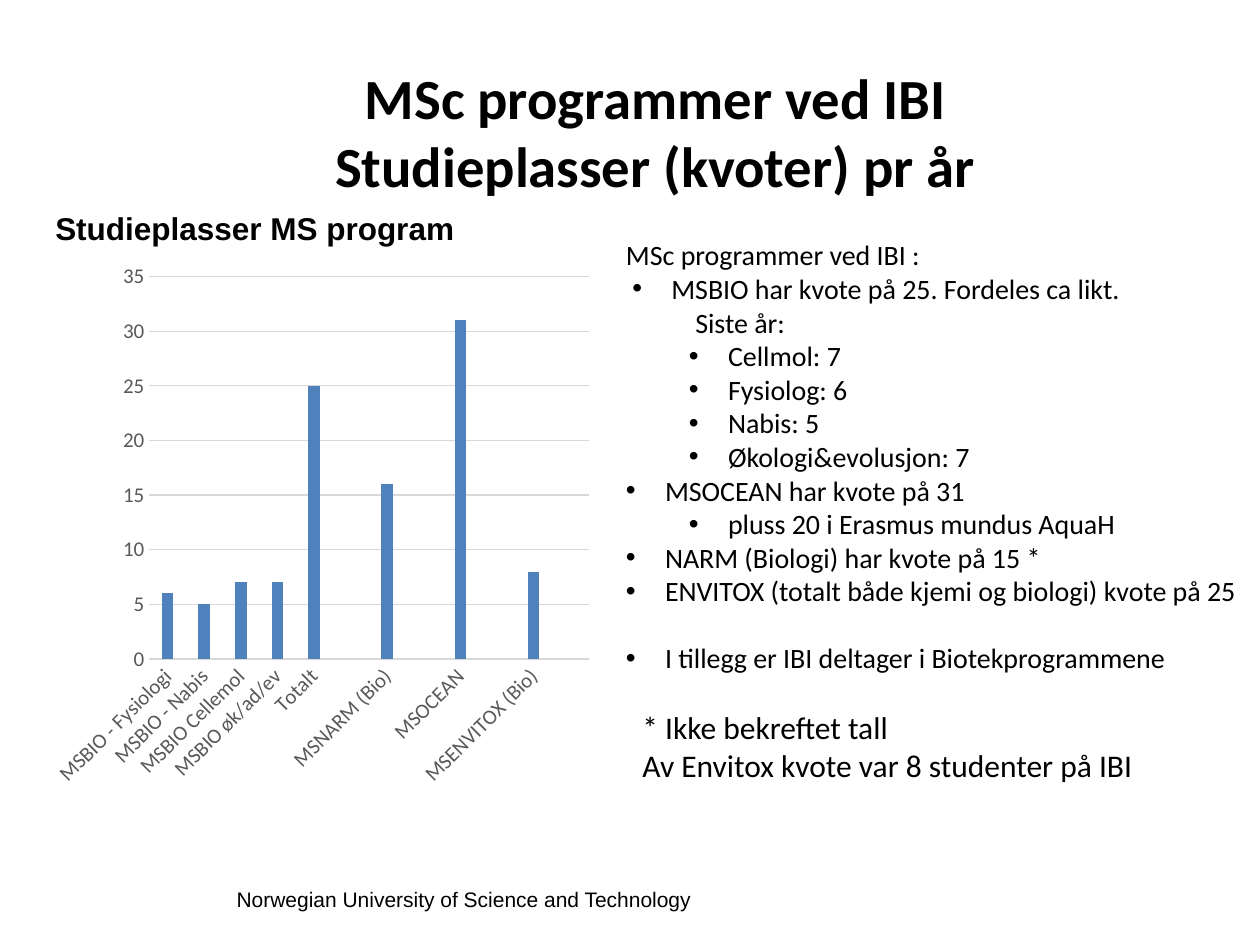
import pptx
import pptx.chart.data
import pptx.dml.color
import pptx.enum.chart
import pptx.enum.text
import pptx.oxml
import pptx.oxml.ns
import pptx.util

RGBColor = pptx.dml.color.RGBColor
Inches, Pt = pptx.util.Inches, pptx.util.Pt
ALIGN, ANCHOR = pptx.enum.text.PP_ALIGN, pptx.enum.text.MSO_ANCHOR

BLACK = RGBColor(0, 0, 0)
GREY = RGBColor(0x59, 0x59, 0x59)
GRID = RGBColor(0xD9, 0xD9, 0xD9)
BLUE = RGBColor(0x4F, 0x81, 0xBD)

TITLE = ["MSc programmer ved IBI\vStudieplasser (kvoter) pr år"]
CHART_TITLE = ["Studieplasser MS program"]
NOTES = ["* Ikke bekreftet tall", "Av Envitox kvote var 8 studenter på IBI"]
FOOTER = ["Norwegian University of Science and Technology"]

PLACES = [
    ("MSBIO - Fysiologi", 6),
    ("MSBIO - Nabis", 5),
    ("MSBIO Cellemol", 7),
    ("MSBIO øk/ad/ev", 7),
    ("Totalt", 25),
    ("", None),
    ("MSNARM (Bio)", 16),
    ("", None),
    ("MSOCEAN", 31),
    ("", None),
    ("MSENVITOX (Bio)", 8),
    ("", None),
]

HANGING = 0.31
STYLES = {
    "plain": (0, False),
    "follow": (0.55, False),
    "first": (0.36, True),
    "bullet": (0.31, True),
    "sub": (0.81, True),
}
PROGRAMMES = [
    ("plain", "MSc programmer ved IBI :"),
    ("first", "MSBIO har kvote på 25. Fordeles ca likt."),
    ("follow", "Siste år:"),
    ("sub", "Cellmol: 7"),
    ("sub", "Fysiolog: 6"),
    ("sub", "Nabis: 5"),
    ("sub", "Økologi&evolusjon: 7"),
    ("bullet", "MSOCEAN har kvote på 31"),
    ("sub", "pluss 20 i Erasmus mundus AquaH"),
    ("bullet", "NARM (Biologi) har kvote på 15 *"),
    ("bullet", "ENVITOX (totalt både kjemi og biologi) kvote på 25"),
    ("bullet", "I tillegg er IBI deltager i Biotekprogrammene"),
]

LEFT, CHART_W = 0.34, 4.42
CHART_TOP, CHART_H, HEADING_H = 2.01, 4.32, 0.7


def add_text(slide, box, lines, size, name="Calibri", bold=False,
             align=ALIGN.LEFT, anchor=ANCHOR.TOP, wrap=True):
    tf = slide.shapes.add_textbox(*map(Inches, box)).text_frame
    tf.word_wrap = wrap
    tf.vertical_anchor = anchor
    for i, line in enumerate(lines):
        p = tf.paragraphs[0] if i == 0 else tf.add_paragraph()
        p.text = line
        p.alignment = align
        p.font.size, p.font.name, p.font.bold = Pt(size), name, bold
        p.font.color.rgb = BLACK
    return tf


def set_indent(p, margin, bullet):
    pPr = p._p.get_or_add_pPr()
    pPr.set("marL", str(Inches(margin)))
    if bullet:
        first = min(margin, HANGING) if margin < 0.5 else HANGING
        pPr.set("indent", str(-Inches(first)))
        ns = pptx.oxml.ns.nsdecls("a")
        font = pptx.oxml.parse_xml(f'<a:buFont {ns} typeface="Arial"/>')
        char = pptx.oxml.parse_xml(f'<a:buChar {ns} char="•"/>')
        defaults = pPr.find(pptx.oxml.ns.qn("a:defRPr"))
        defaults.addprevious(font)
        defaults.addprevious(char)


def add_programmes(slide):
    lines = [text for _, text in PROGRAMMES]
    tf = add_text(slide, (4.87, 1.84, 5.13, 3.87), lines, 16)
    for p, (style, _) in zip(tf.paragraphs, PROGRAMMES):
        set_indent(p, *STYLES[style])
    tf.paragraphs[-1].space_before = Pt(19.2)


def style_axis(axis):
    axis.major_tick_mark = pptx.enum.chart.XL_TICK_MARK.NONE
    axis.minor_tick_mark = pptx.enum.chart.XL_TICK_MARK.NONE
    font = axis.tick_labels.font
    font.size, font.name = Pt(12), "Calibri"
    font.color.rgb = GREY


def add_places_chart(slide):
    data = pptx.chart.data.CategoryChartData()
    data.categories = [name for name, _ in PLACES]
    data.add_series("Series 1", [value for _, value in PLACES])
    chart = slide.shapes.add_chart(
        pptx.enum.chart.XL_CHART_TYPE.COLUMN_CLUSTERED,
        *map(Inches, (LEFT, CHART_TOP, CHART_W, CHART_H)), data).chart
    chart.has_legend = False
    chart.has_title = False
    chart.font.size, chart.font.name = Pt(10), "Calibri"
    chart.font.color.rgb = BLACK

    plot = chart.plots[0]
    plot.vary_by_categories = False
    plot.gap_width, plot.overlap = 219, -27
    fill = plot.series[0].format.fill
    fill.solid()
    fill.fore_color.rgb = BLUE

    cat, val = chart.category_axis, chart.value_axis
    style_axis(cat)
    style_axis(val)
    cat.has_major_gridlines = False
    val.has_major_gridlines = True
    val.minimum_scale, val.maximum_scale, val.major_unit = 0, 35, 5
    val.format.line.fill.background()
    for line in (cat.format.line, val.major_gridlines.format.line):
        line.color.rgb = GRID
        line.width = Pt(0.75)
    body = cat.tick_labels.font._element.getparent().getparent().getparent()
    body.find(pptx.oxml.ns.qn("a:bodyPr")).set("rot", str(-45 * 60000))


def main():
    prs = pptx.Presentation()
    prs.slide_width, prs.slide_height = Inches(10), Inches(7.5)
    slide = prs.slides.add_slide(prs.slide_layouts[6])
    add_text(slide, (1.78, 6.99, 4.17, 0.3), FOOTER, 12, "Arial")
    add_text(slide, (0.7, 0.41, 9, 1.25), TITLE, 32.4, bold=True,
             align=ALIGN.CENTER, anchor=ANCHOR.MIDDLE)
    add_programmes(slide)
    add_text(slide, (LEFT, CHART_TOP - HEADING_H, CHART_W, HEADING_H),
             CHART_TITLE, 18, "Arial", bold=True, anchor=ANCHOR.BOTTOM)
    add_places_chart(slide)
    add_text(slide, (5, 5.57, 4.19, 0.71), NOTES, 18, wrap=False)
    prs.save("out.pptx")


if __name__ == "__main__":
    main()
